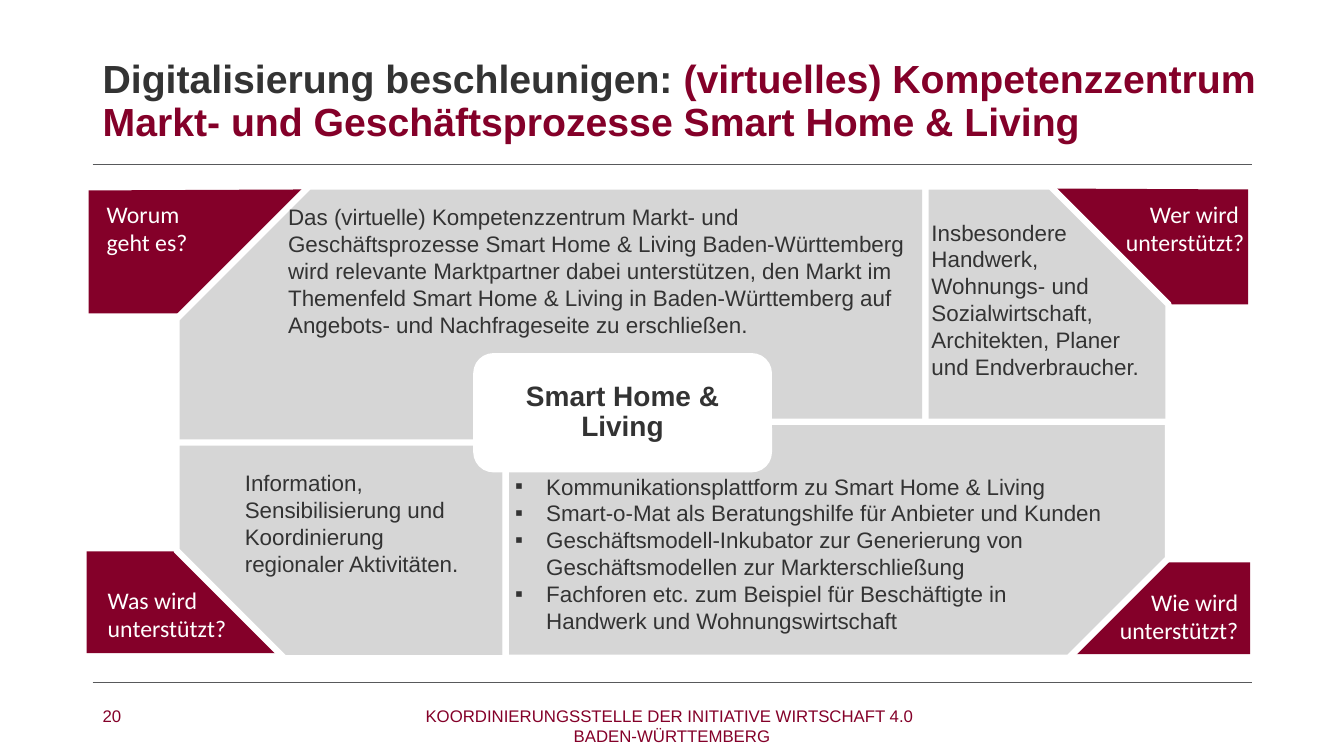
from dataclasses import dataclass

from lxml import etree
from pptx import Presentation
from pptx.dml.color import RGBColor
from pptx.enum.shapes import MSO_CONNECTOR, MSO_SHAPE
from pptx.enum.text import MSO_ANCHOR, MSO_AUTO_SIZE, PP_ALIGN
from pptx.oxml.ns import qn
from pptx.util import Emu, Pt

PX = 9144  # 100 px to the inch
COLORS = {"wine": "840029", "ink": "333333", "panel": "D6D6D6",
          "white": "FFFFFF", "rule": "58595B"}
Box = tuple[int, int, int, int]


@dataclass(frozen=True)
class Run:
    text: str
    color: str = "ink"


@dataclass(frozen=True)
class Label:
    box: Box
    paragraphs: list[list[Run]]
    size: int = 16
    font: str = "Arial"
    bold: bool = False
    align: PP_ALIGN = PP_ALIGN.LEFT
    anchor: MSO_ANCHOR = MSO_ANCHOR.TOP
    spacing: float | None = None
    space_after: int = 0
    wrap: bool = True
    bullet: str = ""


@dataclass(frozen=True)
class Panel:
    box: Box
    shape: MSO_SHAPE
    adjustments: tuple[float, ...]
    rotation: int = 0
    flipped: bool = False


def px(n: int) -> Emu:
    return Emu(n * PX)


def rgb(name: str) -> RGBColor:
    return RGBColor.from_string(COLORS[name])


def paint(s, fill: str, line: str | None = None, width: float = 1) -> None:
    s.shadow.inherit = False
    s.fill.solid()
    s.fill.fore_color.rgb = rgb(fill)
    if line:
        s.line.color.rgb = rgb(line)
        s.line.width = Pt(width)
    else:
        s.line.fill.background()


def add_rule(shapes, y: int) -> None:
    s = shapes.add_connector(MSO_CONNECTOR.STRAIGHT, px(92), px(y), px(1242), px(y))
    s.line.color.rgb = rgb("rule")
    s.line.width = Pt(0.5)
    etree.SubElement(s._element.spPr, qn("a:effectLst"))


def add_corner(shapes, points: list[tuple[int, int]]) -> None:
    builder = shapes.build_freeform(*points[0], scale=PX)
    builder.add_line_segments(points[1:], close=True)
    paint(builder.convert_to_shape(), "wine")


def add_panel(shapes, panel: Panel) -> None:
    s = shapes.add_shape(panel.shape, *map(px, panel.box))
    for i, value in enumerate(panel.adjustments):
        s.adjustments[i] = value
    s.rotation = panel.rotation
    if panel.flipped:
        s._element.spPr.get_or_add_xfrm().set("flipH", "1")
    paint(s, "panel", "white", 4.5)


def add_bullet(p, char: str) -> None:
    pPr = p._p.get_or_add_pPr()
    pPr.set("marL", str(px(31)))
    pPr.set("indent", str(px(-31)))
    etree.SubElement(pPr, qn("a:buFont")).set("typeface", "Arial")
    etree.SubElement(pPr, qn("a:buChar")).set("char", char)


def write(tf, label: Label) -> None:
    """Fill a text frame with the label's paragraphs; a newline is a line break."""
    tf.word_wrap = label.wrap
    tf.vertical_anchor = label.anchor
    if not label.wrap:
        tf.auto_size = MSO_AUTO_SIZE.SHAPE_TO_FIT_TEXT
    for i, runs in enumerate(label.paragraphs):
        p = tf.add_paragraph() if i else tf.paragraphs[0]
        p.alignment = label.align
        if label.spacing:
            p.line_spacing = label.spacing
        if label.space_after:
            p.space_after = Pt(label.space_after)
        if label.bullet:
            add_bullet(p, label.bullet)
        for run in runs:
            for j, line in enumerate(run.text.split("\n")):
                if j:
                    p.add_line_break()
                r = p.add_run()
                r.text = line
                r.font.name = label.font
                r.font.size = Pt(label.size)
                r.font.bold = label.bold
                r.font.color.rgb = rgb(run.color)


def question(box: Box, text: str, align: PP_ALIGN = PP_ALIGN.LEFT) -> Label:
    return Label(box, [[Run(text, "white")]], 17, "Calibri", align=align, wrap=False)


CORNERS = [
    [(1240, 558), (1154, 558), (1039, 649), (1240, 649)],
    [(86, 547), (176, 547), (298, 648), (86, 648)],
    [(88, 311), (178, 311), (300, 188), (88, 189)],
    [(1238, 302), (1152, 302), (1037, 187), (1238, 188)],
]
SNIP = MSO_SHAPE.SNIP_ROUND_RECTANGLE
PANELS = [
    Panel((175, 185, 743, 263), SNIP, (0, 0.5), flipped=True),
    Panel((918, 185, 241, 234), MSO_SHAPE.SNIP_1_RECTANGLE, (0.5,)),
    Panel((175, 439, 327, 214), SNIP, (0, 0.5), rotation=180),
    Panel((713, 207, 234, 657), SNIP, (0, 0.42), rotation=90),
]
HUB = Label((470, 351, 295, 117), [[Run("Smart Home & Living")]], 20, bold=True,
            align=PP_ALIGN.CENTER, anchor=MSO_ANCHOR.MIDDLE, spacing=0.9)
LABELS = [
    Label((412, 695, 509, 40),
          [[Run("KOORDINIERUNGSSTELLE DER INITIATIVE WIRTSCHAFT 4.0 \nBADEN-WÜRTTEMBERG", "wine")]],
          12, align=PP_ALIGN.CENTER),
    Label((92, 40, 1188, 123),
          [[Run("Digitalisierung beschleunigen: "),
            Run("(virtuelles) Kompetenzzentrum Markt- und Geschäftsprozesse "
                "Smart Home & Living", "wine")]],
          28, bold=True, anchor=MSO_ANCHOR.MIDDLE, spacing=0.9),
    question((97, 576, 140, 67), "Was wird\nunterstützt?"),
    question((96, 193, 102, 67), "Worum\ngeht es?"),
    question((1104, 193, 140, 67), "Wer wird \nunterstützt?", PP_ALIGN.RIGHT),
    question((1093, 578, 145, 67), "Wie wird\nunterstützt?", PP_ALIGN.RIGHT),
    Label((501, 464, 684, 170),
          [[Run("Kommunikationsplattform zu Smart Home & Living")],
           [Run("Smart-o-Mat als Beratungshilfe für Anbieter und Kunden")],
           [Run("Geschäftsmodell-Inkubator zur Generierung von "
                "Geschäftsmodellen zur Markterschließung")],
           [Run("Fachforen etc. zum Beispiel für Beschäftigte in \n"
                "Handwerk und Wohnungswirtschaft")]],
          bullet="▪"),
    Label((276, 197, 657, 143),
          [[Run("Das (virtuelle) Kompetenzzentrum Markt- und Geschäftsprozesse Smart Home "
                "& Living Baden-Württemberg wird relevante Marktpartner dabei unterstützen, "
                "den Markt im Themenfeld Smart Home & Living in Baden-Württemberg auf "
                "Angebots- und Nachfrageseite zu erschließen.")]]),
    Label((233, 461, 242, 117),
          [[Run("Information, Sensibilisierung und Koordinierung regionaler Aktivitäten.")]],
          space_after=3),
    Label((914, 212, 241, 170),
          [[Run("Insbesondere Handwerk, Wohnungs- und Sozialwirtschaft, Architekten, "
                "Planer und Endverbraucher.")]],
          space_after=3),
    Label((92, 695, 76, 40), [[Run("20", "wine")]], 12),
]


def main() -> None:
    prs = Presentation()
    prs.slide_width, prs.slide_height = px(1333), px(750)
    shapes = prs.slides.add_slide(prs.slide_layouts[6]).shapes
    for y in (677, 163):
        add_rule(shapes, y)
    for points in CORNERS:
        add_corner(shapes, points)
    for panel in PANELS:
        add_panel(shapes, panel)
    hub = shapes.add_shape(MSO_SHAPE.ROUNDED_RECTANGLE, *map(px, HUB.box))
    paint(hub, "white", "white")
    write(hub.text_frame, HUB)
    for label in LABELS:
        write(shapes.add_textbox(*map(px, label.box)).text_frame, label)
    prs.save("out.pptx")


if __name__ == "__main__":
    main()
